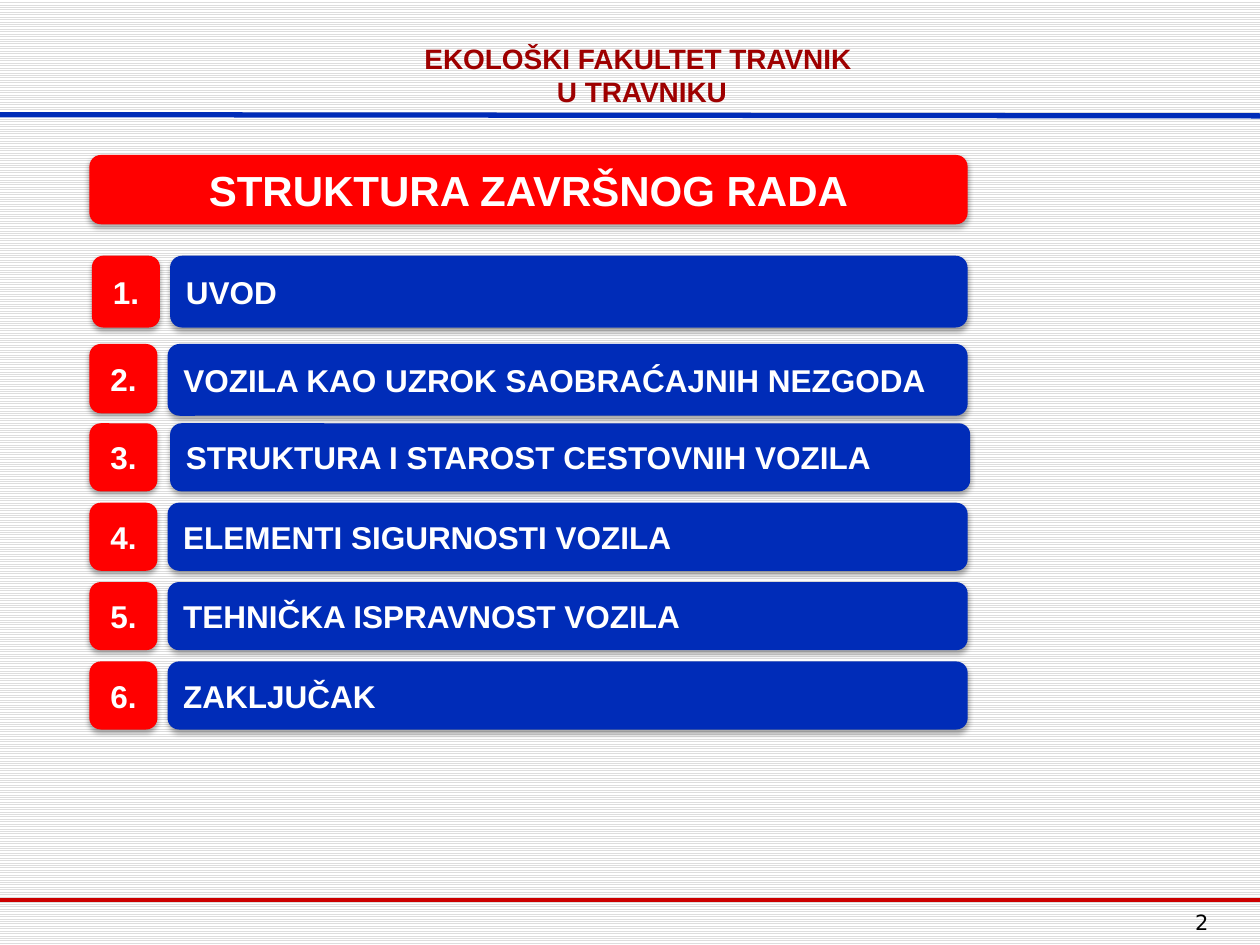
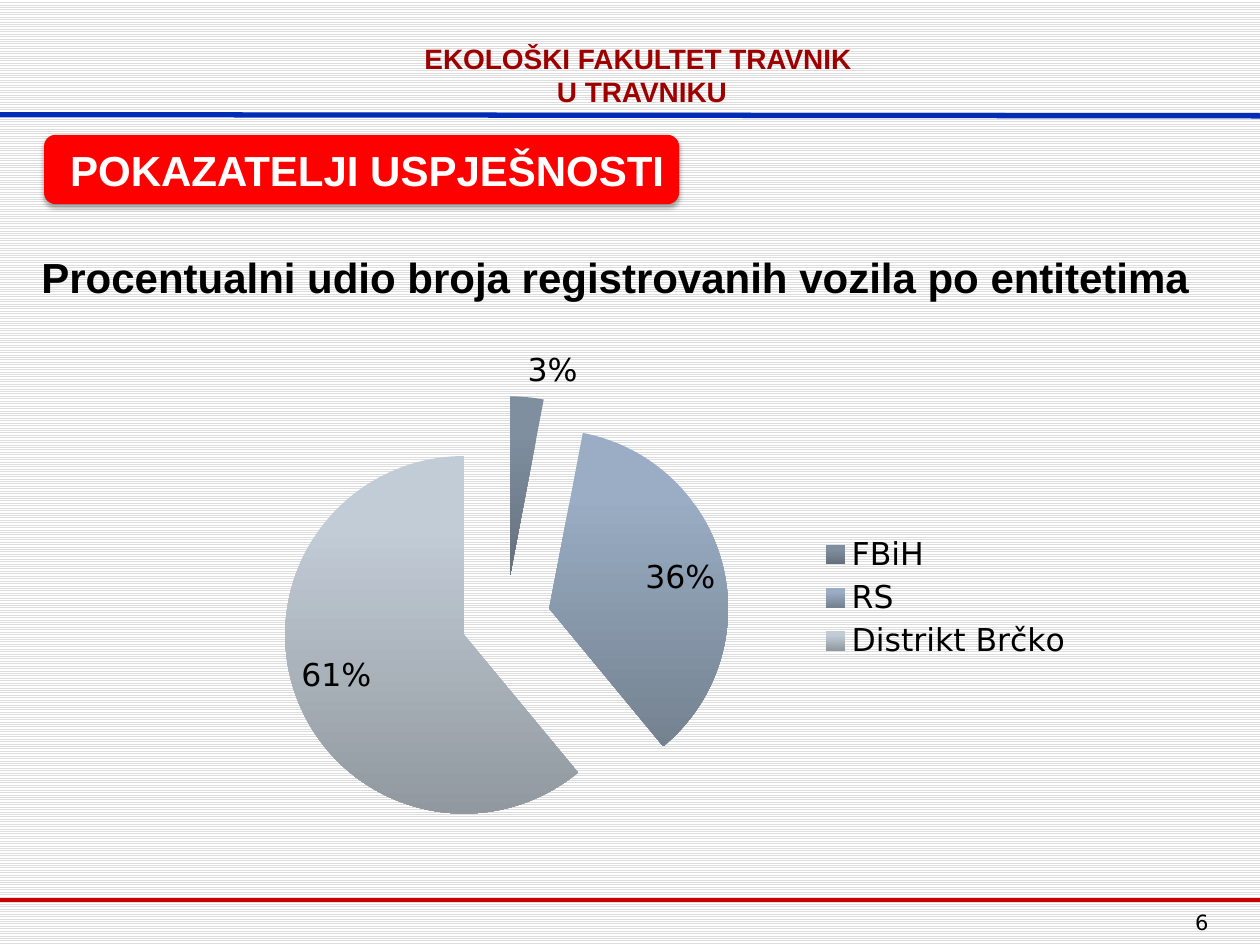
from typing import Any, NamedTuple

from lxml import etree
from pptx import Presentation, util as u
from pptx.chart import data
from pptx.dml import color
from pptx.enum import chart as charts, dml, shapes, text
from pptx.oxml import ns

RED, BLUE, WHITE, BLACK = "FF0000", "002CB8", "FFFFFF", "000000"
TITLE_RED, FOOTER_RED, STRIPE_GREY = "9E0000", "CC0000", "DDDDDD"
SANS, NUMBER_FONT = "Arial", "DejaVu Sans"
CENTER, RIGHT = text.PP_ALIGN.CENTER, text.PP_ALIGN.RIGHT
LEFT, JUSTIFY = text.PP_ALIGN.LEFT, text.PP_ALIGN.JUSTIFY


class Place(NamedTuple):
    left: float
    top: float
    width: float
    height: float

    def lengths(self) -> list[u.Length]:
        return [u.Inches(value) for value in self]


class Style(NamedTuple):
    size: float
    colour: str = WHITE
    align: Any = CENTER
    name: str = SANS
    bold: bool = True


class Rule(NamedTuple):
    start_y: float
    end_y: float
    colour: str
    weight: float


class Topic(NamedTuple):
    title: str
    top: float
    badge_left: float = 0.71
    badge_height: float = 0.54
    bar_left: float = 1.33
    bar_width: float = 6.35
    bar_height: float = 0.54


class Slice(NamedTuple):
    label: str
    value: int
    top_colour: str
    bottom_colour: str


HEADING = Style(24)
BADGE = Style(18)
BAR = Style(18, align=JUSTIFY)
FACULTY = Style(16, TITLE_RED)
SUBTITLE = Style(24, BLACK, LEFT)
PAGE_NUMBER = Style(12, BLACK, RIGHT, NUMBER_FONT, False)

RULES = [Rule(7.14, 7.14, FOOTER_RED, 2.25), Rule(0.91, 0.92, BLUE, 3)]

FIRST_STEP_TOP, STEP = 2.73, 0.63
TOPICS = [
    Topic("UVOD", 2.03, 0.73, 0.57, 1.35, 6.33, 0.57),
    Topic("VOZILA KAO UZROK SAOBRAĆAJNIH NEZGODA", FIRST_STEP_TOP,
          badge_height=0.55, bar_height=0.57),
    Topic("STRUKTURA I STAROST CESTOVNIH VOZILA", FIRST_STEP_TOP + STEP, bar_left=1.35),
    Topic("ELEMENTI SIGURNOSTI VOZILA", FIRST_STEP_TOP + 2 * STEP),
    Topic("TEHNIČKA ISPRAVNOST VOZILA", FIRST_STEP_TOP + 3 * STEP),
    Topic("ZAKLJUČAK", FIRST_STEP_TOP + 4 * STEP),
]

SLICES = [
    Slice("FBiH", 3, "7F8FA0", "65707B"),
    Slice("RS", 36, "9AADC4", "748290"),
    Slice("Distrikt Brčko", 61, "C2CCD6", "91989F"),
]


def rgb(value: str) -> color.RGBColor:
    return color.RGBColor.from_string(value)


def set_font(font: Any, style: Style) -> None:
    values = {"size": u.Pt(style.size), "name": style.name, "bold": style.bold}
    for key, value in values.items():
        setattr(font, key, value)
    font.color.rgb = rgb(style.colour)


def write(shape: Any, lines: list[str], style: Style, wrap: bool = False,
          anchor: Any = text.MSO_ANCHOR.TOP) -> None:
    frame = shape.text_frame
    frame.word_wrap = wrap
    frame.vertical_anchor = anchor
    for index, line in enumerate(lines):
        para = frame.add_paragraph() if index else frame.paragraphs[0]
        para.alignment = style.align
        span = para.add_run()
        span.text = line
        set_font(span.font, style)


def add_label(page: Any, place: Place, lines: list[str], style: Style,
              wrap: bool = True) -> None:
    write(page.shapes.add_textbox(*place.lengths()), lines, style, wrap)


def add_effects(shape: Any) -> Any:
    return etree.SubElement(shape._element.spPr, ns.qn("a:effectLst"))


def add_panel(page: Any, place: Place, caption: str, fill: str, style: Style) -> None:
    """Rounded panel with a soft shadow straight below it."""
    box = page.shapes.add_shape(
        shapes.MSO_SHAPE.FLOWCHART_ALTERNATE_PROCESS, *place.lengths())
    box.fill.solid()
    box.fill.fore_color.rgb = rgb(fill)
    box.line.fill.background()
    shadow = etree.SubElement(
        add_effects(box), ns.qn("a:outerShdw"), blurRad=str(u.Pt(3.1)),
        dist=str(u.Pt(1.8)), dir="5400000", rotWithShape="0")
    tint = etree.SubElement(shadow, ns.qn("a:srgbClr"), val=BLACK)
    etree.SubElement(tint, ns.qn("a:alpha"), val="35000")
    write(box, [caption], style, anchor=text.MSO_ANCHOR.MIDDLE)


def add_page(deck: Any, number: int) -> Any:
    """Blank page with the striped background, rules, faculty name and number."""
    page = deck.slides.add_slide(deck.slide_layouts[6])
    stripes = page.background.fill
    stripes.patterned()
    stripes.pattern = dml.MSO_PATTERN.LIGHT_HORIZONTAL
    stripes.fore_color.rgb = rgb(STRIPE_GREY)
    stripes.back_color.rgb = rgb(WHITE)
    for rule in RULES:
        line = page.shapes.add_connector(
            shapes.MSO_CONNECTOR.STRAIGHT, u.Inches(0), u.Inches(rule.start_y),
            deck.slide_width, u.Inches(rule.end_y))
        line.line.color.rgb = rgb(rule.colour)
        line.line.width = u.Pt(rule.weight)
        add_effects(line)
    add_label(page, Place(3.25, 0.28, 3.69, 0.64),
              ["EKOLOŠKI FAKULTET TRAVNIK ", "U TRAVNIKU"], FACULTY, wrap=False)
    add_label(page, Place(7.52, 7.17, 2.17, 0.52), [str(number)], PAGE_NUMBER)
    return page


def add_structure(deck: Any) -> None:
    page = add_page(deck, 2)
    add_panel(page, Place(0.71, 1.23, 6.97, 0.55), "STRUKTURA ZAVRŠNOG RADA", RED, HEADING)
    for number, topic in enumerate(TOPICS, 1):
        badge = Place(topic.badge_left, topic.top, 0.54, topic.badge_height)
        bar = Place(topic.bar_left, topic.top, topic.bar_width, topic.bar_height)
        add_panel(page, badge, f"{number}.", RED, BADGE)
        add_panel(page, bar, topic.title, BLUE, BAR)


def add_pie(page: Any, place: Place) -> None:
    table = data.CategoryChartData()
    table.categories = [part.label for part in SLICES]
    table.add_series("Series 1", [part.value for part in SLICES])
    pie = page.shapes.add_chart(charts.XL_CHART_TYPE.PIE, *place.lengths(), table).chart
    set_font(pie.font, Style(18, BLACK, name=NUMBER_FONT, bold=False))
    pie.has_title = False
    pie.has_legend = True
    pie.legend.position = charts.XL_LEGEND_POSITION.RIGHT
    pie.legend.include_in_layout = False

    # Slices pulled apart, each shaded from top to bottom
    plot = pie.plots[0]
    plot.vary_by_categories = True
    series = plot.series[0]
    explosion = etree.Element(ns.qn("c:explosion"), val="25")
    series._element.find(ns.qn("c:tx")).addnext(explosion)
    for index, part in enumerate(SLICES):
        fill = series.points[index].format.fill
        fill.gradient()
        fill.gradient_angle = 270
        shades = (part.top_colour, 0.2), (part.bottom_colour, 1)
        for stop, (shade, position) in zip(fill.gradient_stops, shades):
            stop.color.rgb = rgb(shade)
            stop.position = position

    plot.has_data_labels = True
    label_format = {
        "show_percentage": True, "show_value": False, "number_format": "0%",
        "number_format_is_linked": False,
        "position": charts.XL_LABEL_POSITION.BEST_FIT,
    }
    for key, value in label_format.items():
        setattr(plot.data_labels, key, value)


def add_indicators(deck: Any) -> None:
    page = add_page(deck, 6)
    add_panel(page, Place(0.35, 1.07, 5.04, 0.55), " POKAZATELJI USPJEŠNOSTI", RED, HEADING)
    add_pie(page, Place(1.56, 2.66, 7.06, 4.17))
    add_label(page, Place(0.23, 1.95, 9.77, 0.5),
              ["Procentualni udio broja registrovanih vozila po entitetima"], SUBTITLE)


def main() -> None:
    deck = Presentation()
    deck.slide_width, deck.slide_height = u.Inches(10), u.Inches(7.5)
    add_structure(deck)
    add_indicators(deck)
    deck.save("out.pptx")


if __name__ == "__main__":
    main()
